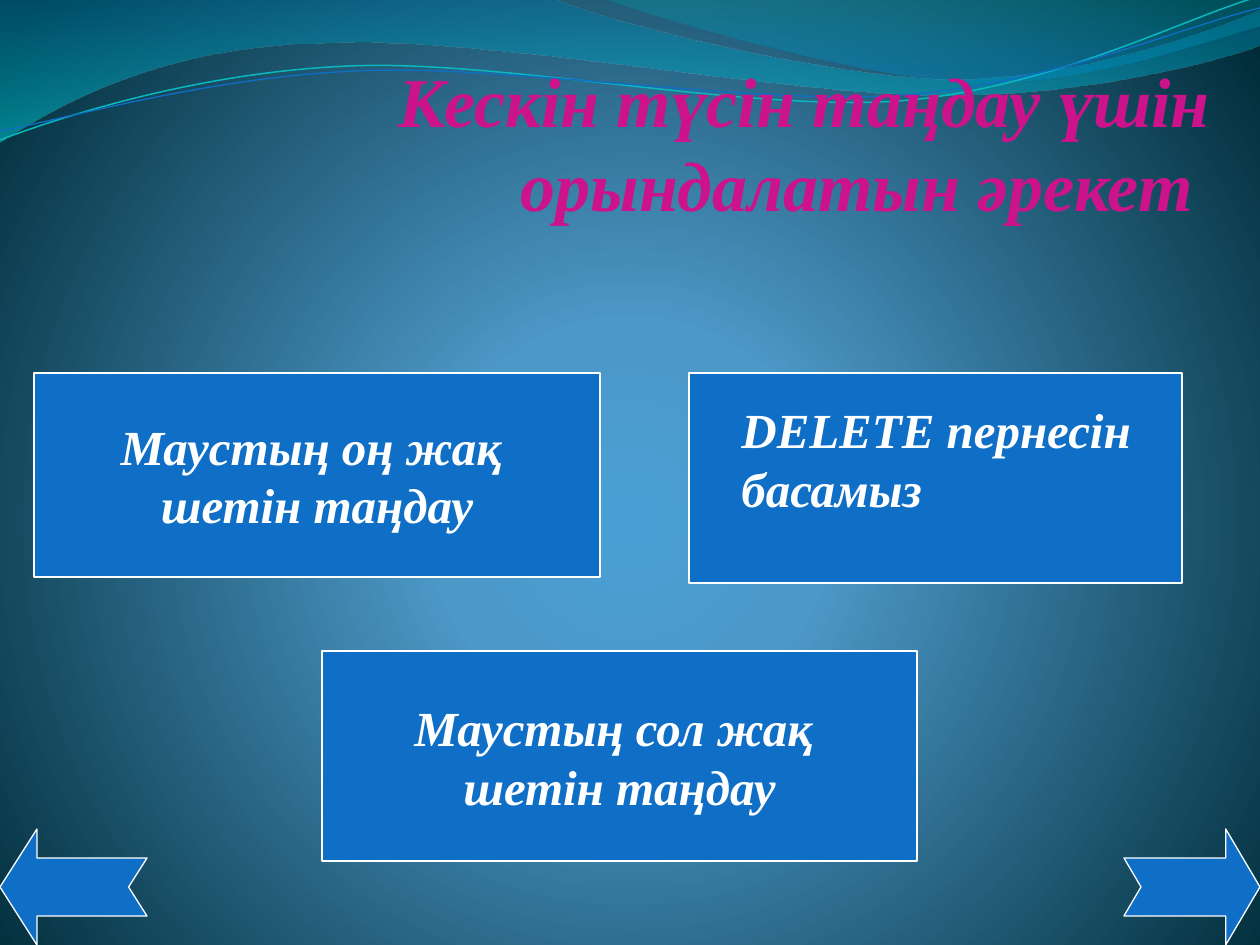
from dataclasses import dataclass

import lxml.etree
import pptx
import pptx.dml.color
import pptx.enum.shapes
import pptx.enum.text
import pptx.oxml.ns
import pptx.util

ALIGN = pptx.enum.text.PP_ALIGN
ANCHOR = pptx.enum.text.MSO_ANCHOR
SHAPE = pptx.enum.shapes.MSO_SHAPE
EMU_PER_PX = 914400 / 126


@dataclass(frozen=True)
class Theme:
    """Colours, gradients and type sizes of the slide."""
    font: str = "Times New Roman"
    blue: str = "0F6FC6"
    teal: str = "0AB8BF"
    white: str = "FFFFFF"
    pink: str = "CD138B"
    title_size: int = 40
    answer_size: int = 28
    outline: float = 0.75
    glow: tuple = ((0, "4AA0D6", 100), (25, "4C98C7", 100), (100, "002C38", 100))
    wide_wave: tuple = ((0, "0074A1", 45), (100, "00C6CF", 55))
    small_wave: tuple = ((0, "00A1A9", 30), (80, "008BBF", 45))


def emu(px):
    """Convert px to EMU."""
    return round(px * EMU_PER_PX)


def rgb(code):
    """Return the colour for a hexadecimal code."""
    return pptx.dml.color.RGBColor.from_string(code)


def add_child(parent, tag, **attributes):
    """Append a drawing element with the given attributes."""
    values = {name: str(value) for name, value in attributes.items()}
    return lxml.etree.SubElement(parent, pptx.oxml.ns.qn(tag), values)


def set_gradient(parent, stops, center=None):
    """Replace an empty fill by a vertical or circular gradient."""
    empty_fill = parent.find(pptx.oxml.ns.qn("a:noFill"))
    gradient = lxml.etree.Element(pptx.oxml.ns.qn("a:gradFill"), rotWithShape="1")
    stop_list = add_child(gradient, "a:gsLst")
    for position, color, alpha in stops:
        stop = add_child(stop_list, "a:gs", pos=position * 1000)
        color_element = add_child(stop, "a:srgbClr", val=color)
        if alpha < 100:
            add_child(color_element, "a:alpha", val=alpha * 1000)
    if center:
        circle = add_child(gradient, "a:path", path="circle")
        add_child(circle, "a:fillToRect", **{side: value * 1000 for side, value in center.items()})
    else:
        add_child(gradient, "a:lin", ang=5400000, scaled=1)
    parent.replace(empty_fill, gradient)


def bend(shape, segments):
    """Turn the straight sides with control points into cubic curves."""
    for side, segment in zip(shape.element.xpath(".//a:lnTo"), segments):
        if len(segment) == 6:
            curve = lxml.etree.Element(pptx.oxml.ns.qn("a:cubicBezTo"))
            for x, y in zip(segment[::2], segment[1::2]):
                add_child(curve, "a:pt", x=emu(x) - shape.left, y=emu(y) - shape.top)
            side.getparent().replace(side, curve)


def write_text(frame, *lines, font, size, color, align=ALIGN.LEFT, anchor=ANCHOR.TOP, wrap=True):
    """Write bold italic lines, one paragraph each."""
    frame.auto_size = pptx.enum.text.MSO_AUTO_SIZE.NONE
    frame.word_wrap = wrap
    frame.vertical_anchor = anchor
    for index, line in enumerate(lines):
        paragraph = frame.add_paragraph() if index else frame.paragraphs[0]
        paragraph.alignment = align
        paragraph.space_before = pptx.util.Pt(0)
        run = paragraph.add_run()
        run.text = line
        run.font.name = font
        run.font.size = pptx.util.Pt(size)
        run.font.bold = run.font.italic = True
        run.font.color.rgb = rgb(color)


class SlideBuilder:
    """Holds the theme and the current slide."""

    def __init__(self, presentation, theme):
        """Add a title-only slide with a glowing background."""
        self.theme = theme
        self.slide = presentation.slides.add_slide(presentation.slide_layouts[5])
        self.slide.background.fill.background()
        background = self.slide.element.xpath(".//p:bgPr")[0]
        set_gradient(background, theme.glow, center={"l": 10, "t": 110, "r": 10, "b": 100})

    def curve(self, start, *segments, closed):
        """Draw an unfilled outline of straight and cubic segments."""
        ends = [(emu(x), emu(y)) for *_, x, y in segments]
        builder = self.slide.shapes.build_freeform(*map(emu, start), scale=1.0)
        builder.add_line_segments(ends, close=closed)
        shape = builder.convert_to_shape()
        bend(shape, segments)
        shape.shadow.inherit = False
        shape.fill.background()
        return shape

    def wave(self, stops, start, *segments):
        """Draw a translucent wave."""
        shape = self.curve(start, *segments, closed=True)
        shape.line.fill.background()
        set_gradient(shape.element.spPr, stops)

    def ribbon(self, color, width, start, *segments):
        """Draw a thin curved line."""
        shape = self.curve(start, *segments, closed=False)
        shape.line.color.rgb = rgb(color)
        shape.line.width = pptx.util.Pt(width)

    def panel(self, kind, left, top, width, height):
        """Draw a blue shape with a white outline."""
        shape = self.slide.shapes.add_shape(kind, *map(emu, (left, top, width, height)))
        shape.shadow.inherit = False
        shape.fill.solid()
        shape.fill.fore_color.rgb = rgb(self.theme.blue)
        shape.line.color.rgb = rgb(self.theme.white)
        shape.line.width = pptx.util.Pt(self.theme.outline)
        return shape

    def arrow(self, left, width, head, rotation=0):
        """Draw a navigation arrow at the foot of the slide."""
        shape = self.panel(SHAPE.NOTCHED_RIGHT_ARROW, left, 829, width, 116)
        shape.adjustments[0] = 0.5
        shape.adjustments[1] = head
        shape.rotation = rotation

    def title(self, text, left, top, width, height):
        """Fill the title placeholder and bring it in front of the waves."""
        shape = self.slide.shapes.title
        shape.left, shape.top, shape.width, shape.height = map(emu, (left, top, width, height))
        frame = shape.text_frame
        frame.margin_left, frame.margin_top, frame.margin_right = 0, emu(5), emu(8)
        write_text(frame, text, font=self.theme.font, size=self.theme.title_size,
                   color=self.theme.pink, align=ALIGN.RIGHT)
        self.slide.shapes.element.append(shape.element)

    def answer(self, frame, *lines, **text_format):
        """Write an answer in the answer style."""
        write_text(frame, *lines, font=self.theme.font, size=self.theme.answer_size,
                   color=self.theme.white, **text_format)

    def answer_panel(self, left, top, width, height, *lines):
        """Draw a panel with a centred answer."""
        shape = self.panel(SHAPE.RECTANGLE, left, top, width, height)
        self.answer(shape.text_frame, *lines, align=ALIGN.CENTER, anchor=ANCHOR.MIDDLE, wrap=False)

    def answer_box(self, left, top, width, height, *lines):
        """Add a text box with an answer."""
        box = self.slide.shapes.add_textbox(*map(emu, (left, top, width, height)))
        self.answer(box.text_frame, *lines)


def main():
    """Build and save the quiz slide."""
    presentation = pptx.Presentation()
    presentation.slide_width, presentation.slide_height = emu(1260), emu(945)
    theme = Theme()
    quiz = SlideBuilder(presentation, theme)
    quiz.wave(theme.wide_wave, (0, 0), (554, -1), (600, 21, 837, 79, 955, 79),
              (1075, 79, 1207, 33, 1260, 11), (1261, 45), (1239, 55, 1096, 96, 940, 95),
              (784, 95, 481, 35, 324, 43), (163, 45, 58, 105, -1, 142), (0, 0))
    quiz.wave(theme.small_wave, (604, -1), (641, 14, 859, 78, 969, 82),
              (1079, 87, 1211, 40, 1260, 26), (1260, 0), (604, -1))
    quiz.ribbon(theme.teal, 0.85, (0, 140), (60, 117, 199, 72, 349, 66),
                (498, 59, 747, 112, 898, 101), (1050, 89, 1182, 19, 1257, -3))
    quiz.ribbon(theme.blue, 0.75, (0, 131), (59, 121, 207, 77, 357, 71),
                (508, 64, 753, 106, 903, 95), (1053, 84, 1184, 26, 1260, 8))
    quiz.arrow(1124, 136, head=0.295)
    quiz.arrow(0, 147, head=0.318, rotation=180)
    quiz.title("Кескін түсін таңдау үшін орындалатын әрекет ", 53, 53, 1165, 850)
    quiz.answer_panel(34, 373, 566, 204, "Маустың оң жақ ", "шетін таңдау")
    quiz.panel(SHAPE.RECTANGLE, 689, 373, 493, 210)
    quiz.answer_panel(322, 651, 595, 210, "Маустың сол жақ ", "шетін таңдау")
    quiz.answer_box(729, 393, 436, 130, "DELETE пернесін басамыз")
    presentation.save("out.pptx")


if __name__ == "__main__":
    main()
